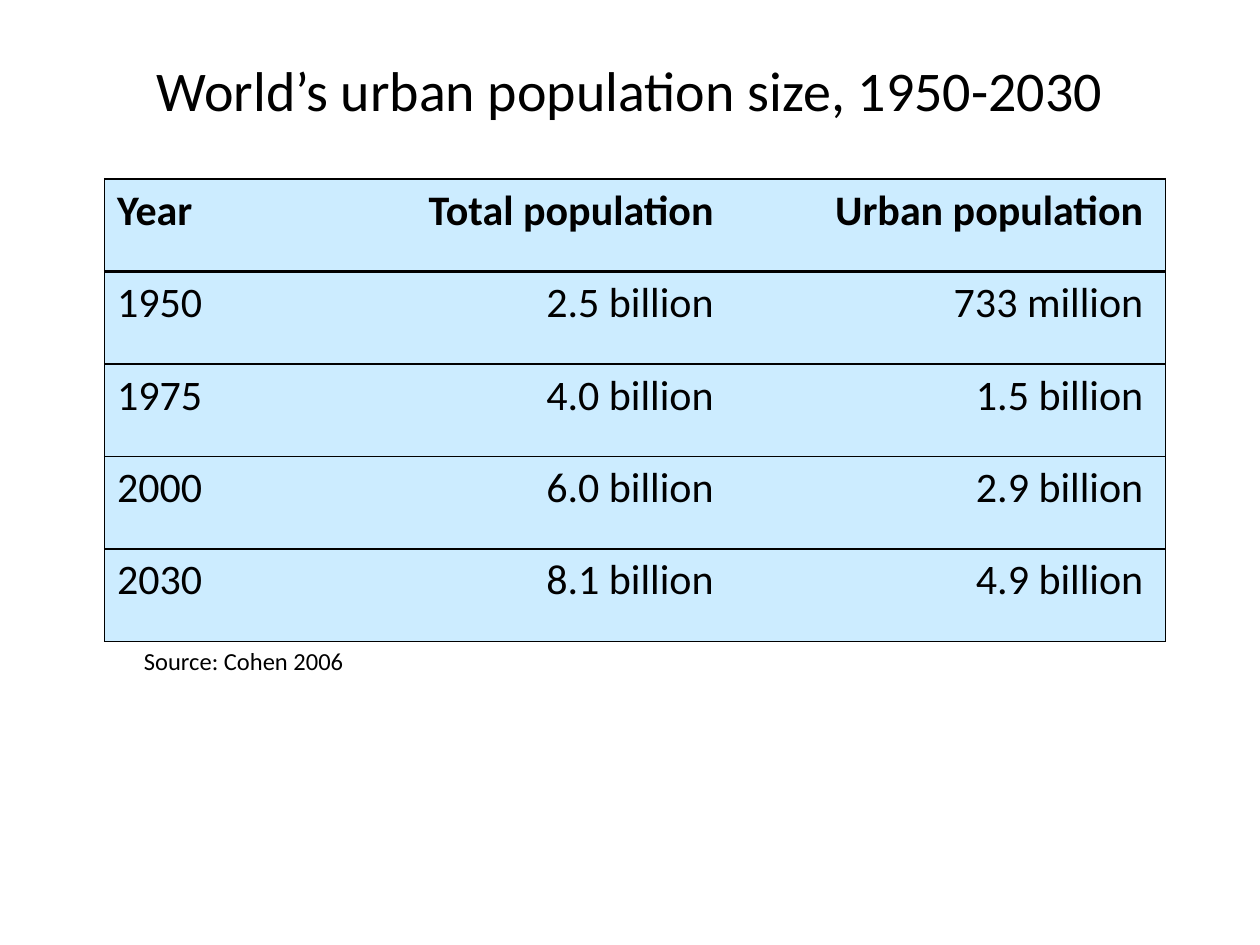
from dataclasses import dataclass

from lxml import etree
from pptx import Presentation
from pptx.dml.color import RGBColor
from pptx.enum import text
from pptx.oxml import ns
from pptx.util import Inches, Pt


@dataclass(frozen=True)
class Theme:
    font: str = "Calibri"
    ink: str = "000000"
    cell_fill: str = "CCECFF"
    title_size: int = 32
    table_size: int = 24
    source_size: int = 14
    thick: float = 1.5
    thin: float = 1


THEME = Theme()
COLUMN_WIDTHS = (1.81, 3.2, 3.41)
ROWS = (
    ("Year", "Total population ", "Urban population "),
    ("1950", "2.5 billion ", "733 million "),
    ("1975", "4.0 billion ", "1.5 billion "),
    ("2000", "6.0 billion ", "2.9 billion "),
    ("2030", "8.1 billion ", "4.9 billion "),
)


def add_run(paragraph, wording, size, bold=False):
    run = paragraph.add_run()
    run.text = wording
    run.font.name = THEME.font
    run.font.size = Pt(size)
    run.font.bold = bold
    run.font.color.rgb = RGBColor.from_string(THEME.ink)


def add_label(slide, box, wording, size, alignment, anchor, wrap):
    frame = slide.shapes.add_textbox(*map(Inches, box)).text_frame
    frame.word_wrap = wrap
    frame.vertical_anchor = anchor
    paragraph = frame.paragraphs[0]
    paragraph.alignment = alignment
    add_run(paragraph, wording, size)


def set_borders(cell, left, right, top, bottom):
    """Draw each side at its width in points; zero hides the side."""
    properties = cell._tc.get_or_add_tcPr()
    for side, width in zip("LRTB", (left, right, top, bottom)):
        line = etree.SubElement(properties, ns.qn(f"a:ln{side}"), w=str(Pt(width)))
        if width:
            fill = etree.SubElement(line, ns.qn("a:solidFill"))
            etree.SubElement(fill, ns.qn("a:srgbClr"), val=THEME.ink)
        else:
            etree.SubElement(line, ns.qn("a:noFill"))


def add_population_table(slide, box):
    last_column = len(COLUMN_WIDTHS) - 1
    table = slide.shapes.add_table(
        len(ROWS), len(COLUMN_WIDTHS), *map(Inches, box)
    ).table
    table.first_row = False
    table.horz_banding = False
    for column, width in zip(table.columns, COLUMN_WIDTHS):
        column.width = Inches(width)

    for row_index, row in enumerate(ROWS):
        is_header = row_index == 0
        for column_index, wording in enumerate(row):
            cell = table.cell(row_index, column_index)
            set_borders(
                cell,
                left=THEME.thin if column_index == 0 else 0,
                right=THEME.thin if column_index == last_column else 0,
                top=THEME.thick if row_index <= 1 else THEME.thin,
                bottom=THEME.thick if is_header else THEME.thin,
            )
            cell.fill.solid()
            cell.fill.fore_color.rgb = RGBColor.from_string(THEME.cell_fill)
            paragraph = cell.text_frame.paragraphs[0]
            if column_index > 0:
                paragraph.alignment = text.PP_ALIGN.RIGHT
            add_run(paragraph, wording, THEME.table_size, is_header)


def build_slide(presentation):
    slide = presentation.slides.add_slide(presentation.slide_layouts[6])
    add_label(slide, (0.75, 0.17, 8.5, 1.08),
              "World’s urban population size, 1950-2030", THEME.title_size,
              text.PP_ALIGN.CENTER, text.MSO_ANCHOR.MIDDLE, wrap=True)
    add_population_table(slide, (0.83, 1.42, sum(COLUMN_WIDTHS), 3.67))
    add_label(slide, (1, 5.08, 2.05, 0.34), " Source: Cohen 2006",
              THEME.source_size, text.PP_ALIGN.LEFT, text.MSO_ANCHOR.TOP,
              wrap=False)


def main():
    presentation = Presentation()
    presentation.slide_width = Inches(10)
    presentation.slide_height = Inches(7.5)
    build_slide(presentation)
    presentation.save("out.pptx")


if __name__ == "__main__":
    main()
